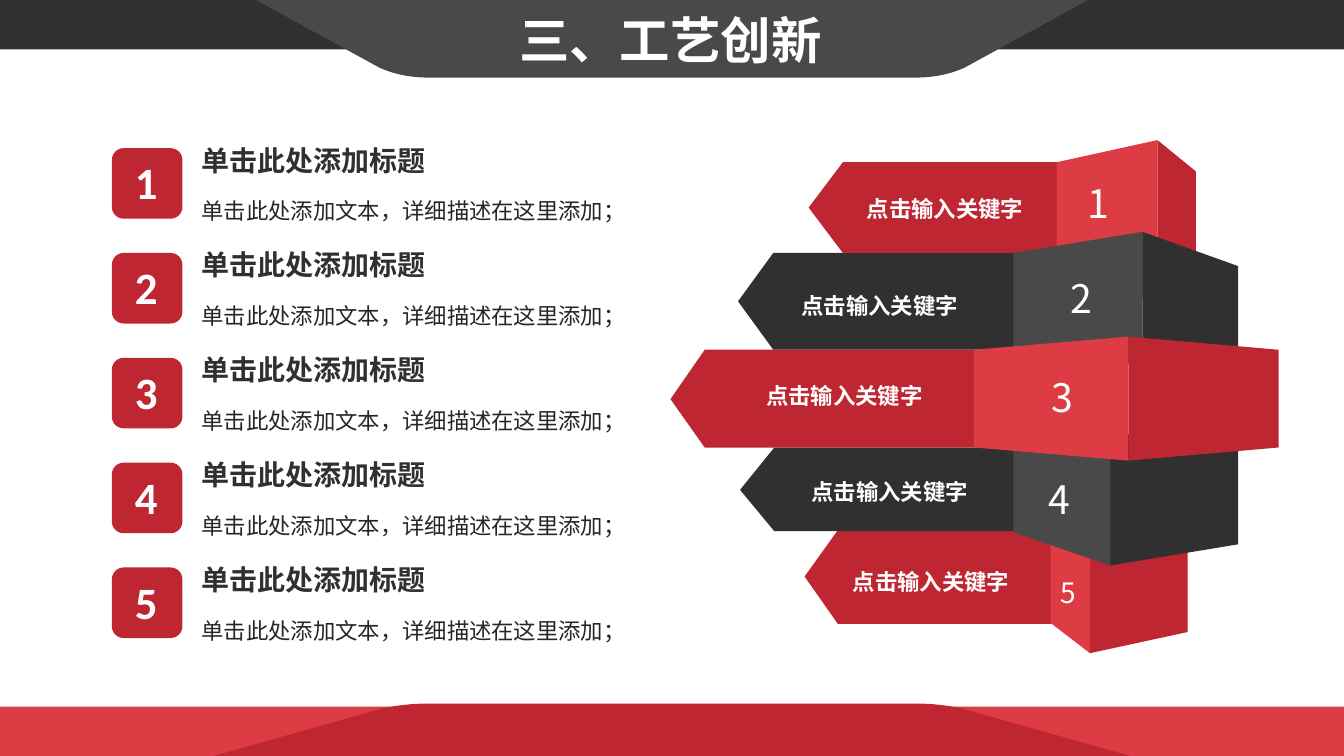
import dataclasses
import typing

import pptx
import pptx.dml.color
import pptx.enum.shapes
import pptx.enum.text
import pptx.oxml
import pptx.oxml.ns
import pptx.util

Inches = pptx.util.Inches
RGB = pptx.dml.color.RGBColor
SHAPE = pptx.enum.shapes.MSO_SHAPE
ALIGN = pptx.enum.text.PP_ALIGN
ANCHOR = pptx.enum.text.MSO_ANCHOR
FIT = pptx.enum.text.MSO_AUTO_SIZE

RED = RGB(0xBE, 0x26, 0x32)
ROSE = RGB(0xDD, 0x3C, 0x44)
DARK = RGB(0x30, 0x30, 0x30)
GRAY = RGB(0x4A, 0x49, 0x49)
INK = RGB(0x26, 0x26, 0x26)
WHITE = RGB(0xFF, 0xFF, 0xFF)
SANS = "Noto Sans CJK SC"
WIDE, HIGH = 13.33, 7.5
STEP = 1.04

Point = tuple[float, float]
Box = tuple[float, float, float, float]
Edge = tuple[float, float, float]  # x, top, bottom


@dataclasses.dataclass
class Arrow:
    tip: Point
    neck: float
    end: float
    top: float
    base: float


@dataclasses.dataclass
class Block:
    """Two faces that meet at a ridge, with an arrow on the left."""
    mark: str
    arrow: Arrow
    left: Edge
    ridge: Edge
    right: Edge
    label: Point
    spot: Point
    face: RGB = ROSE
    side: RGB = RED
    size: int = 28


BLOCKS = [
    Block("1", Arrow((8.02, 2.06), 8.36, 10.91, 1.61, 2.51), (10.48, 1.61, 2.86),
          (11.48, 1.39, 2.99), (11.86, 1.7, 2.86), (8.5, 1.89), (10.54, 1.6)),
    Block("2", Arrow((7.32, 2.99), 7.67, 10.78, 2.51, 3.47), (10.05, 2.51, 3.51),
          (11.33, 2.3, 3.62), (12.28, 2.64, 3.51), (7.85, 2.85), (10.38, 2.54),
          GRAY, DARK),
    Block("3", Arrow((6.65, 3.96), 6.99, 10.05, 3.47, 4.44), (9.66, 3.47, 4.44),
          (11.19, 3.34, 4.57), (12.68, 3.47, 4.44), (7.5, 3.74), (10.19, 3.52)),
    Block("4", Arrow((7.34, 4.86), 7.68, 10.07, 4.44, 5.27), (10.05, 4.41, 5.28),
          (11.01, 4.29, 5.61), (12.28, 4.41, 5.4), (7.95, 4.69), (10.16, 4.53),
          GRAY, DARK),
    Block("5", Arrow((7.98, 5.72), 8.31, 10.43, 5.26, 6.19), (10.42, 5.4, 6.18),
          (10.81, 4.89, 6.48), (11.78, 5.02, 6.27), (8.36, 5.59), (10.25, 5.46),
          size=20),
]
STACK = [0, 1, 4, 3, 2]  # block order, back to front


def paint(shape: typing.Any, fill: RGB) -> None:
    shape.shadow.inherit = False
    shape.fill.solid()
    shape.fill.fore_color.rgb = fill
    shape.line.fill.background()


def poly(shapes: typing.Any, points: list[Point], fill: RGB) -> None:
    spots = [(Inches(x), Inches(y)) for x, y in points]
    form = shapes.build_freeform(*spots[0])
    form.add_line_segments(spots[1:], close=True)
    paint(form.convert_to_shape(), fill)


def plate(shapes: typing.Any, kind: typing.Any, box: Box, fill: RGB) -> typing.Any:
    shape = shapes.add_shape(kind, *map(Inches, box))
    paint(shape, fill)
    return shape


def write(shapes: typing.Any, text: str, box: Box, *, size: int, color: RGB,
          bold: bool = False, font: str = SANS, wrap: bool = True,
          grow: bool = False, middle: bool = False, oval: bool = False,
          space: float = 1.0) -> None:
    place = [Inches(n) for n in box]
    if oval:
        shape = shapes.add_shape(SHAPE.OVAL, *place)
        shape.shadow.inherit = False
        shape.fill.background()
        shape.line.fill.background()
    else:
        shape = shapes.add_textbox(*place)
    frame = shape.text_frame
    frame.word_wrap = wrap
    frame.auto_size = FIT.SHAPE_TO_FIT_TEXT if grow else FIT.NONE
    frame.vertical_anchor = ANCHOR.MIDDLE if middle else ANCHOR.TOP
    para = frame.paragraphs[0]
    para.alignment = ALIGN.CENTER if oval else ALIGN.LEFT
    para.line_spacing = space
    run = para.add_run()
    run.text = text
    run.font.size = pptx.util.Pt(size)
    run.font.bold = bold
    run.font.color.rgb = color
    run.font.name = font
    # East Asian glyphs take their own font entry
    east = pptx.oxml.parse_xml(
        f'<a:ea {pptx.oxml.ns.nsdecls("a")} typeface="{font}"/>')
    run.font.fill  # colour comes first in the run format
    run.font._element.find(pptx.oxml.ns.qn("a:latin")).addnext(east)


def bend(a: Point, b: Point, c: Point, d: Point, count: int = 12) -> list[Point]:
    """Points along a cubic curve."""
    def at(t: float, i: int) -> float:
        s = 1 - t
        return s**3 * a[i] + 3 * s * s * t * b[i] + 3 * s * t * t * c[i] + t**3 * d[i]
    return [(at(n / count, 0), at(n / count, 1)) for n in range(count + 1)]


def tab(shapes: typing.Any, start: Point, curve: list[Point], fill: RGB) -> None:
    """Centred tab: a left half and its mirror."""
    half = [start] + bend(*curve)
    poly(shapes, half + [(WIDE - x, y) for x, y in reversed(half)], fill)


def item(slide: typing.Any, row: int) -> None:
    shapes = slide.shapes.add_group_shape().shapes
    down = row * STEP
    write(shapes, "单击此处添加文本，详细描述在这里添加；", (1.9, 1.77 + down, 4.38, 0.51),
          size=16, color=INK, grow=True, middle=True, space=1.5)
    badge = plate(shapes, SHAPE.ROUNDED_RECTANGLE, (1.11, 1.47 + down, 0.7, 0.7), RED)
    badge.adjustments[0] = 0.167
    write(shapes, str(row + 1), (1.24, 1.49 + down, 0.44, 0.66), size=32,
          color=WHITE, bold=True, font="Calibri", wrap=False, grow=True)
    write(shapes, "单击此处添加标题", (1.9, 1.37 + down, 2.94, 0.44), size=20,
          color=DARK, bold=True, grow=True)


def shaft(shapes: typing.Any, block: Block) -> None:
    a = block.arrow
    poly(shapes, [a.tip, (a.neck, a.top), (a.end, a.top), (a.end, a.base),
                  (a.neck, a.base)], block.side)


def wall(shapes: typing.Any, near: Edge, far: Edge, fill: RGB) -> None:
    poly(shapes, [(near[0], near[1]), (far[0], far[1]),
                  (far[0], far[2]), (near[0], near[2])], fill)


def main() -> None:
    deck = pptx.Presentation()
    deck.slide_width, deck.slide_height = Inches(WIDE), Inches(HIGH)
    slide = deck.slides.add_slide(deck.slide_layouts[6])
    shapes = slide.shapes

    # Footer and header bands
    plate(shapes, SHAPE.RECTANGLE, (0, 7.01, WIDE, 0.49), ROSE)
    tab(shapes, (2.12, HIGH), [(3.75, 7.04), (3.9, 7), (4.08, 6.98), (4.24, 6.98)], RED)
    plate(shapes, SHAPE.RECTANGLE, (0, 0, WIDE, 0.49), DARK)
    tab(shapes, (2.54, 0), [(3.76, 0.67), (3.91, 0.74), (4.08, 0.77), (4.25, 0.77)], GRAY)
    write(shapes, "三、工艺创新", (5.05, 0.04, 3.23, 0.71), size=36, color=WHITE,
          bold=True, wrap=False, grow=True)

    # Stacked arrows and blocks
    stack = shapes.add_group_shape().shapes
    for block in reversed(BLOCKS):
        shaft(stack, block)
    for place in STACK:
        block = BLOCKS[place]
        wall(stack, block.ridge, block.right, block.side)
        wall(stack, block.left, block.ridge, block.face)
    for block in BLOCKS:
        write(shapes, "点击输入关键字", (*block.label, 1.81, 0.41), size=16,
              color=WHITE, bold=True)
        write(shapes, block.mark, (*block.spot, 0.7, 0.83), size=block.size,
              color=WHITE, middle=True, oval=True)

    # Numbered list
    for row in range(len(BLOCKS)):
        item(slide, row)

    deck.save("out.pptx")


if __name__ == "__main__":
    main()
